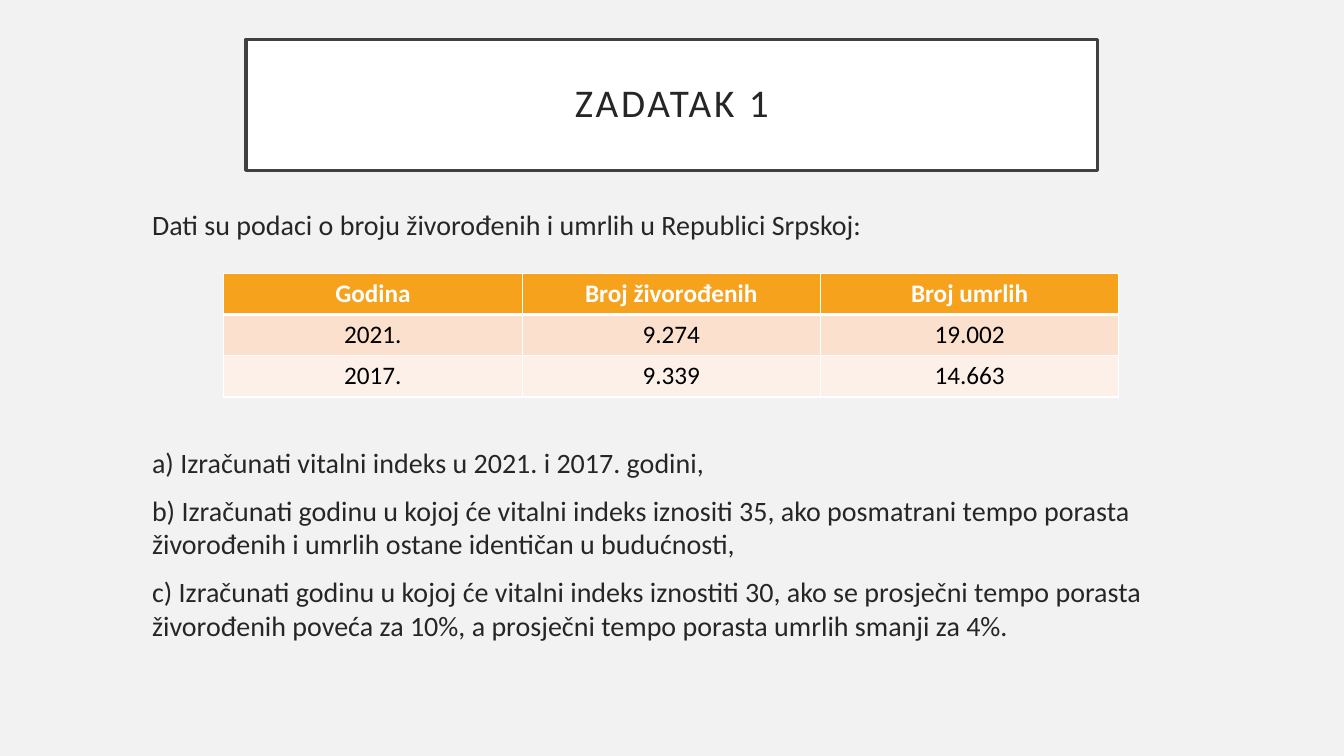
"""Build the exercise slide on the vital index: title, data table and three tasks."""
from pptx import Presentation
from pptx.dml.color import RGBColor
from pptx.enum.text import MSO_ANCHOR, MSO_AUTO_SIZE, PP_ALIGN
from pptx.oxml import parse_xml
from pptx.oxml.ns import nsdecls
from pptx.util import Pt

PX = 9144
FONT = "Calibri"
CENTER = PP_ALIGN.CENTER
MIDDLE = MSO_ANCHOR.MIDDLE
NO_AUTOFIT = MSO_AUTO_SIZE.NONE
WHITE = RGBColor(0xFF, 0xFF, 0xFF)
BLACK = RGBColor(0x00, 0x00, 0x00)
GREY = RGBColor(0xF2, 0xF2, 0xF2)
INK = RGBColor(0x26, 0x26, 0x26)
FRAME = RGBColor(0x40, 0x40, 0x40)
ORANGE = RGBColor(0xF6, 0xA2, 0x1D)
PEACH = RGBColor(0xFB, 0xE0, 0xCD)
CREAM = RGBColor(0xFD, 0xF0, 0xE8)


def box(left, top, width, height):
    return [v * PX for v in (left, top, width, height)]


def style(p, size, color, bold=False):
    p.font.name = FONT
    p.font.size = Pt(size)
    p.font.color.rgb = color
    p.font.bold = bold


prs = Presentation()
prs.slide_width, prs.slide_height = 12192000, 6858000
s = prs.slides.add_slide(prs.slide_layouts[5])
s.background.fill.solid()
s.background.fill.fore_color.rgb = GREY

title = s.shapes.title
title.left, title.top, title.width, title.height = box(244, 39, 845, 130)
title.fill.solid()
title.fill.fore_color.rgb = WHITE
title.line.color.rgb = FRAME
title.line.width = Pt(2.5)
tf = title.text_frame
tf.text = "ZADATAK 1"
tf.auto_size = NO_AUTOFIT
tf.vertical_anchor = MIDDLE
tf.margin_left = tf.margin_top = tf.margin_right = tf.margin_bottom = 20 * PX
p = tf.paragraphs[0]
p.alignment = CENTER
p.line_spacing = 0.9
style(p, 28, INK)
p.runs[0].font._element.set("spc", "200")

PARAGRAPHS = [
    ("Dati su podaci o broju živorođenih i umrlih u Republici Srpskoj:", 0),
    ("a) Izračunati vitalni indeks u 2021. i 2017. godini,", 146),
    ("b) Izračunati godinu u kojoj će vitalni indeks iznositi 35, ako posmatrani tempo "
     "porasta živorođenih i umrlih ostane identičan u budućnosti,", 10),
    ("c) Izračunati godinu u kojoj će vitalni indeks iznostiti 30, ako se prosječni tempo "
     "porasta živorođenih poveća za 10%, a prosječni tempo porasta umrlih smanji za 4%.", 10),
]
tf = s.shapes.add_textbox(*box(141, 201, 1052, 510)).text_frame
tf.word_wrap = True
for i, (text, space) in enumerate(PARAGRAPHS):
    p = tf.add_paragraph() if i else tf.paragraphs[0]
    p.text = text
    p.space_before = Pt(space)
    style(p, 20, INK)

ROWS = [
    (("Godina", "Broj živorođenih", "Broj umrlih"), ORANGE, WHITE),
    (("2021.", "9.274", "19.002"), PEACH, BLACK),
    (("2017.", "9.339", "14.663"), CREAM, BLACK),
]
table = s.shapes.add_table(3, 3, *box(222, 271, 888, 123)).table
for i, (values, fill, color) in enumerate(ROWS):
    header = i == 0
    for j, value in enumerate(values):
        cell = table.cell(i, j)
        cell.text = value
        cell.fill.solid()
        cell.fill.fore_color.rgb = fill
        p = cell.text_frame.paragraphs[0]
        p.alignment = CENTER
        style(p, 18, color, header)
        thick_side = "B" if header else "T" if i == 1 else ""
        tcPr = cell._tc.get_or_add_tcPr()
        for k, side in enumerate("LRTB"):
            width = Pt(3 if side == thick_side else 1)
            tcPr.insert(k, parse_xml(
                f'<a:ln{side} {nsdecls("a")} w="{width}"><a:solidFill>'
                f'<a:srgbClr val="{WHITE}"/></a:solidFill></a:ln{side}>'))

prs.save("out.pptx")
